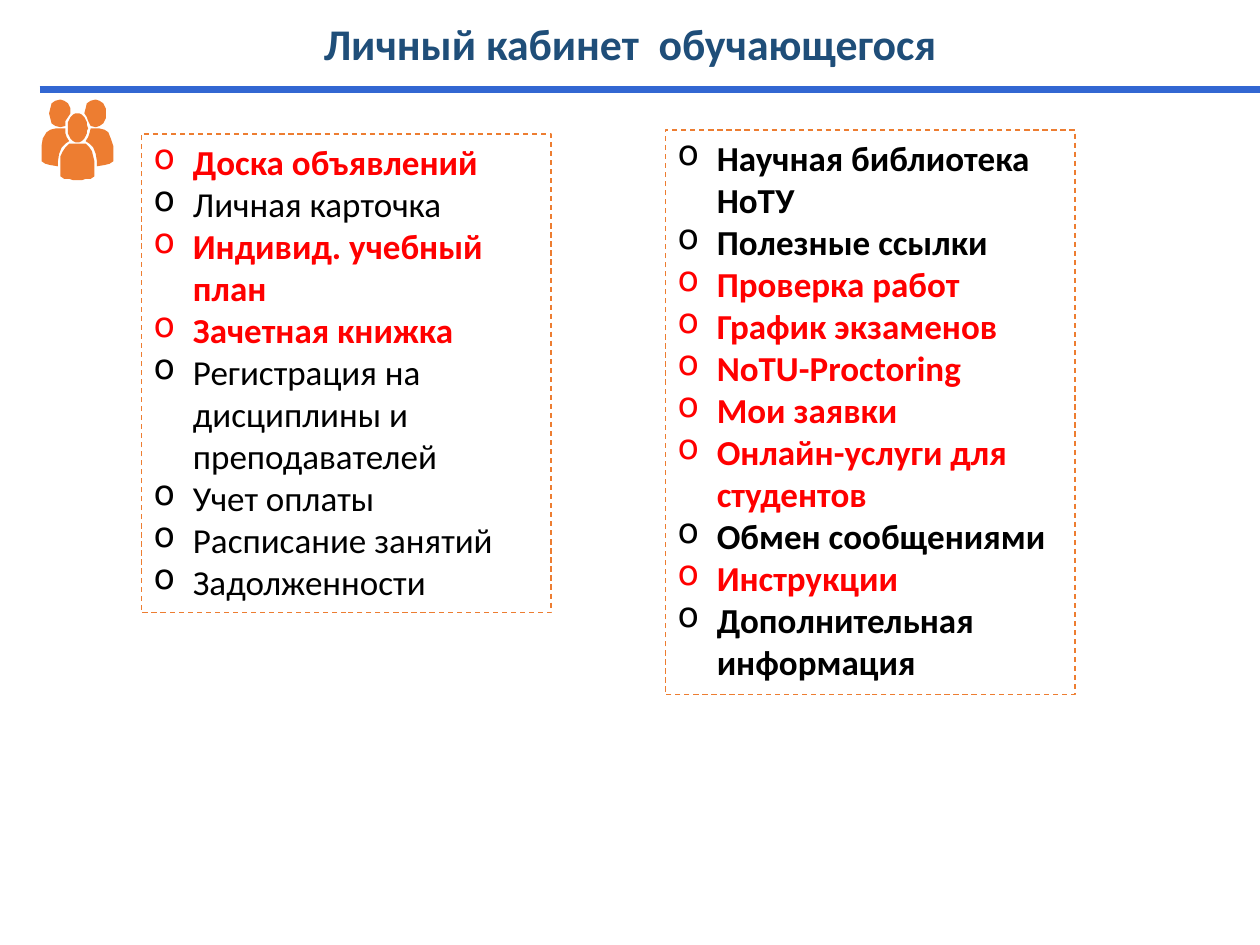
from math import cos, pi, sin

from lxml.etree import SubElement
from pptx import Presentation
from pptx.dml.color import RGBColor
from pptx.enum.dml import MSO_LINE
from pptx.enum.shapes import MSO_CONNECTOR, MSO_SHAPE
from pptx.enum.text import MSO_ANCHOR, MSO_AUTO_SIZE, PP_ALIGN
from pptx.oxml.ns import qn
from pptx.util import Cm, Pt

COLORS = {
    "title": "1F4E79",
    "rule": "3267D2",
    "accent": "ED7D31",
    "red": "FF0000",
    "black": "000000",
}
FONT = "Calibri"
INDENT = Cm(0.79)

# Menu entries: text, color, bold
LEFT_MENU = [
    ("Доска объявлений", "red", True),
    ("Личная карточка", "black", False),
    ("Индивид. учебный план", "red", True),
    ("Зачетная книжка", "red", True),
    ("Регистрация на дисциплины и преподавателей", "black", False),
    ("Учет оплаты", "black", False),
    ("Расписание занятий", "black", False),
    ("Задолженности", "black", False),
]
RIGHT_MENU = [
    ("Научная библиотека НоТУ", "black", True),
    ("Полезные ссылки", "black", True),
    ("Проверка работ", "red", True),
    ("График экзаменов", "red", True),
    ("NoTU-Proctoring", "red", True),
    ("Мои заявки", "red", True),
    ("Онлайн-услуги для студентов", "red", True),
    ("Обмен сообщениями", "black", True),
    ("Инструкции", "red", True),
    ("Дополнительная информация", "black", True),
]

# Icon outlines in units of ICON_UNIT; the right side mirrors the left
ICON_UNIT = Cm(0.0254)
ICON_AXIS = 61.5
FRONT_BODY_HALF = [
    (58, 114), (55, 114.5), (52, 117), (50, 120), (48.5, 124), (48, 128),
    (48, 140), (51, 141.5), (55, 142.5), (58, 143), (61.5, 143),
]
REAR_BODY = [
    (44, 102), (51.5, 102), (52, 106), (53, 109), (55, 112), (52, 113.5),
    (49, 117), (47, 122), (46, 128), (46, 132), (40, 131), (36, 129.5),
    (33, 128), (33, 116), (34.5, 110), (37, 105), (40, 103),
]
REAR_HEAD = [
    (47.5, 79), (51, 79.5), (54, 82.5), (55.5, 86), (56, 90), (54, 93),
    (52.5, 96), (51.5, 100), (47.5, 101), (44, 100.5), (41, 97.5),
    (39.5, 94), (39, 90), (39.5, 86), (41, 82.5), (44, 79.5),
]


def rgb(name):
    return RGBColor.from_string(COLORS[name])


def style_paragraph(para, size, color, bold):
    for span in para.runs:
        span.font.name = FONT
        span.font.size = Pt(size)
        span.font.bold = bold
        span.font.color.rgb = rgb(color)


def add_title(page, text):
    box = page.shapes.add_textbox(Cm(1.75), Cm(0.18), Cm(21.9), Cm(1.52))
    frame = box.text_frame
    frame.word_wrap = True
    frame.vertical_anchor = MSO_ANCHOR.MIDDLE
    frame.text = text
    para = frame.paragraphs[0]
    para.alignment = PP_ALIGN.CENTER
    para.line_spacing = 0.9
    style_paragraph(para, 25, "title", True)


def add_bullet(para):
    properties = para._p.get_or_add_pPr()
    properties.set("marL", str(INDENT))
    properties.set("indent", str(-INDENT))
    SubElement(properties, qn("a:buChar")).set("char", "o")


def add_menu(page, left, top, height, entries):
    box = page.shapes.add_shape(MSO_SHAPE.RECTANGLE, left, top, Cm(8.26), height)
    box.shadow.inherit = False
    box.fill.background()
    box.line.color.rgb = rgb("accent")
    box.line.width = Pt(0.75)
    box.line.dash_style = MSO_LINE.DASH
    frame = box.text_frame
    frame.word_wrap = True
    frame.auto_size = MSO_AUTO_SIZE.SHAPE_TO_FIT_TEXT
    frame.vertical_anchor = MSO_ANCHOR.TOP
    frame.text = "\n".join(text for text, _, _ in entries)
    for para, (_, color, bold) in zip(frame.paragraphs, entries):
        para.alignment = PP_ALIGN.LEFT
        add_bullet(para)
        style_paragraph(para, 20, color, bold)


def mirror(points):
    return [(2 * ICON_AXIS - x, y) for x, y in reversed(points)]


def ellipse(center_x, center_y, radius_x, radius_y, steps=32):
    angles = [2 * pi * step / steps for step in range(steps)]
    return [(center_x + radius_x * cos(a), center_y + radius_y * sin(a)) for a in angles]


def add_people_icon(page):
    outlines = [
        FRONT_BODY_HALF + mirror(FRONT_BODY_HALF),
        ellipse(ICON_AXIS, 101.5, 8, 11.5),
        REAR_BODY, mirror(REAR_BODY),
        REAR_HEAD, mirror(REAR_HEAD),
    ]
    builder = page.shapes.build_freeform(*outlines[0][0], scale=ICON_UNIT)
    for outline in outlines:
        builder.move_to(*outline[0])
        builder.add_line_segments(outline[1:], close=True)
    icon = builder.convert_to_shape()
    icon.shadow.inherit = False
    icon.fill.solid()
    icon.fill.fore_color.rgb = rgb("accent")
    icon.line.fill.background()


def add_rule(page):
    height = Cm(1.8)
    rule = page.shapes.add_connector(MSO_CONNECTOR.STRAIGHT, Cm(0.8), height, Cm(25.4), height)
    rule.line.color.rgb = rgb("rule")
    rule.line.width = Pt(3.75)
    SubElement(rule._element.spPr, qn("a:effectLst"))


def main():
    deck = Presentation()
    deck.slide_width, deck.slide_height = Cm(25.4), Cm(19.05)
    page = deck.slides.add_slide(deck.slide_layouts[6])

    # Heading
    add_title(page, "Личный кабинет  обучающегося")

    # Two menu columns
    add_menu(page, Cm(2.85), Cm(2.7), Cm(9.65), LEFT_MENU)
    add_menu(page, Cm(13.41), Cm(2.62), Cm(11.38), RIGHT_MENU)

    # Icon and heading rule
    add_people_icon(page)
    add_rule(page)

    deck.save("out.pptx")


if __name__ == "__main__":
    main()
